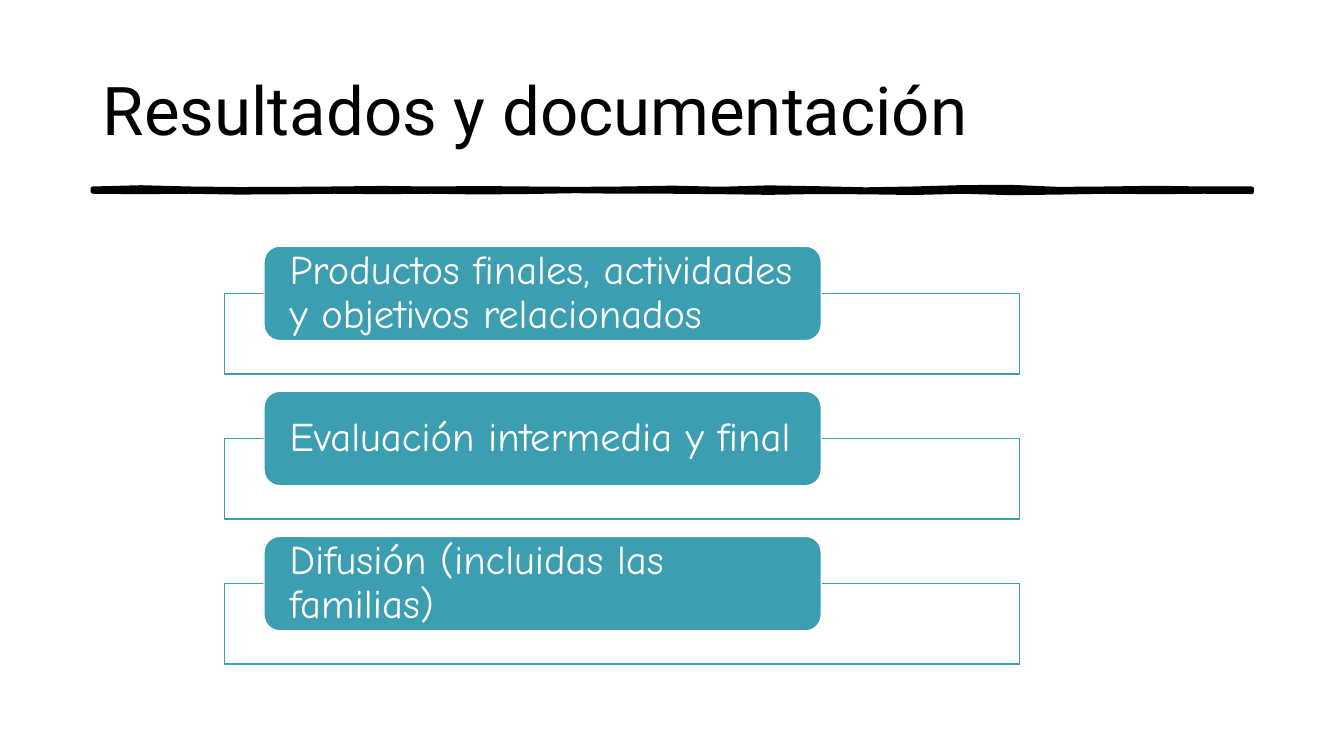
import pptx
import pptx.util
import pptx.dml.color
import pptx.enum.shapes
import pptx.enum.text
import pptx.oxml.ns
import lxml.etree

Pt = pptx.util.Pt
KINDS = pptx.enum.shapes.MSO_SHAPE
TEAL, WHITE, BLACK = "3B9EB1", "FFFFFF", "000000"

TOPICS = [
    "Productos finales, actividades y objetivos relacionados",
    "Evaluación intermedia y final",
    "Difusión (incluidas las familias)",
]
PITCH = 103.65  # distance from one topic to the next

# Small drifts of the hand-drawn rule, left to right, in points
UPPER = [0, -0.9, 0, 0.4, 0.3, 0, -0.4, 0, -0.3, 0, 0.3, 0,
         -0.6, 0.2, -0.8, -0.2, 0.6, 0, -1, -1.2, 0.3, 0, -0.5, 0, 0]
LOWER = [0, 0.3, 0, 0.6, 0.4, 0, 0.3, 0, 0.5, 0.2, -0.4, 0,
         0, 0.3, 0.8, 0.2, 0.4, 0.9, 0, 1, 0.6, 0, 0.3, 0, 0.2]


def paint(style, color):
    """Give a fill or a font one solid colour."""
    rgb = pptx.dml.color.RGBColor.from_string(color)
    if hasattr(style, "solid"):
        style.solid()
        style.fore_color.rgb = rgb
    else:
        style.color.rgb = rgb


def finish(shape, fill, line, width):
    shape.shadow.inherit = False
    paint(shape.fill, fill)
    paint(shape.line.fill, line)
    shape.line.width = Pt(width)


def write(frame, text, font, size, color):
    frame.text = text
    frame.word_wrap = True
    frame.auto_size = pptx.enum.text.MSO_AUTO_SIZE.NONE
    frame.vertical_anchor = pptx.enum.text.MSO_ANCHOR.MIDDLE
    para = frame.paragraphs[0]
    para.alignment = pptx.enum.text.PP_ALIGN.LEFT
    para.line_spacing = 0.9
    para.font.name = font
    para.font.size = Pt(size)
    paint(para.font, color)


def add_title(slide, text):
    title = slide.shapes.title
    title.left, title.top = Pt(66.24), Pt(29)
    title.width, title.height = Pt(828), Pt(104.4)
    write(title.text_frame, text, "Roboto", 48, BLACK)


def add_rule(shapes):
    """Draw the uneven stroke under the title."""
    left, step = 66.24, 828 / (len(UPPER) - 1)

    def edge(drifts, base):
        return [(Pt(left + i * step), Pt(base + d)) for i, d in enumerate(drifts)]

    points = edge(UPPER, 134.7) + edge(LOWER, 136.9)[::-1]
    pen = shapes.build_freeform(*points[0])
    pen.add_line_segments(points[1:])
    finish(pen.convert_to_shape(), BLACK, BLACK, 3)


def add_frame(shapes, top):
    frame = shapes.add_shape(KINDS.RECTANGLE, Pt(160.2), Pt(top), Pt(568), Pt(57.6))
    finish(frame, WHITE, TEAL, 1)
    # Slightly transparent fill
    tint = frame.fill._xPr.find(".//" + pptx.oxml.ns.qn("a:srgbClr"))
    lxml.etree.SubElement(tint, pptx.oxml.ns.qn("a:alpha"), val="90000")


def add_label(shapes, top, text):
    label = shapes.add_shape(
        KINDS.ROUNDED_RECTANGLE, Pt(188.6), Pt(top), Pt(398), Pt(67.5))
    finish(label, TEAL, WHITE, 1)
    frame = label.text_frame
    frame.margin_left = frame.margin_right = Pt(15)
    frame.margin_top = frame.margin_bottom = 0
    write(frame, text, "Comic Neue", 29, WHITE)


def main():
    deck = pptx.Presentation()
    deck.slide_width, deck.slide_height = Pt(960), Pt(540)
    slide = deck.slides.add_slide(deck.slide_layouts[5])

    # Heading
    add_rule(slide.shapes)
    add_title(slide, "Resultados y documentación")

    # Topic list
    group = slide.shapes.add_group_shape()
    for i, topic in enumerate(TOPICS):
        top = 175.8 + i * PITCH
        add_frame(group.shapes, top + 33.7)
        add_label(group.shapes, top, topic)

    deck.save("out.pptx")


if __name__ == "__main__":
    main()
